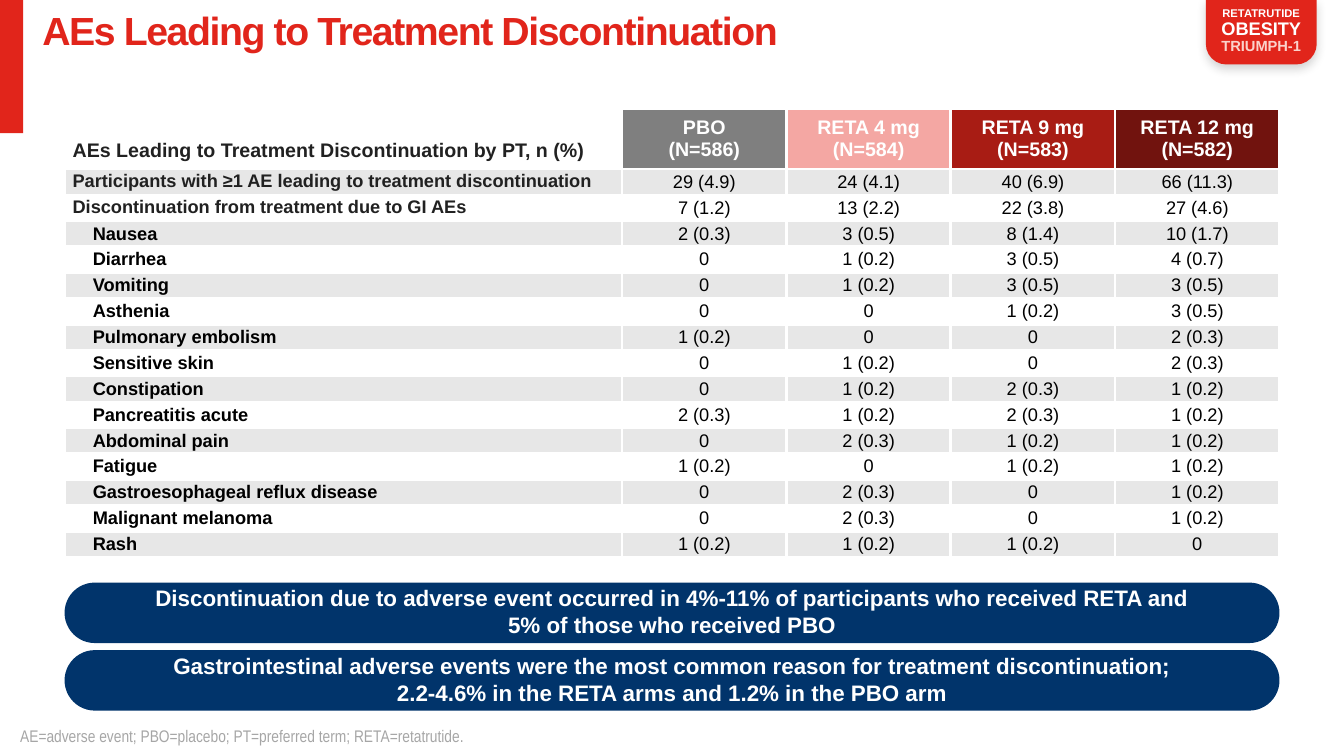
from typing import NamedTuple

from lxml.etree import SubElement
from pptx import Presentation
from pptx.dml.color import RGBColor
from pptx.enum.shapes import MSO_SHAPE as Shape
from pptx.enum.text import MSO_ANCHOR as Anchor, PP_ALIGN as Align
from pptx.oxml.ns import qn
from pptx.util import Inches, Pt

COLORS = {
    "red": "E1251B", "pale_red": "FBD2CB", "navy": "01346B", "white": "FFFFFF",
    "black": "000000", "ink": "212121", "band": "E7E7E7", "note": "A6A6A6",
    "pbo": "7F7F7F", "reta4": "F4A7A3", "reta9": "A81C14", "reta12": "71130E",
}


class Box(NamedTuple):
    left: float
    top: float
    width: float
    height: float

    def emu(self) -> list:
        return [Inches(length) for length in self]


class Style(NamedTuple):
    size: float
    color: str
    bold: bool = True
    align: Align = Align.LEFT
    spacing: float = 1.0
    font: str = "Arial"
    indent: float = 0


class Arm(NamedTuple):
    heading: str
    color: str


class Event(NamedTuple):
    term: str
    counts: tuple
    summary: bool = False


class Message(NamedTuple):
    top: float
    lines: str


ARMS = [
    Arm("PBO\n(N=586)", "pbo"),
    Arm("RETA 4 mg\n(N=584)", "reta4"),
    Arm("RETA 9 mg\n(N=583)", "reta9"),
    Arm("RETA 12 mg\n(N=582)", "reta12"),
]
EVENTS = [
    Event("Participants with ≥1 AE leading to treatment discontinuation",
          ("29 (4.9)", "24 (4.1)", "40 (6.9)", "66 (11.3)"), True),
    Event("Discontinuation from treatment due to GI AEs",
          ("7 (1.2)", "13 (2.2)", "22 (3.8)", "27 (4.6)"), True),
    Event("Nausea", ("2 (0.3)", "3 (0.5)", "8 (1.4)", "10 (1.7)")),
    Event("Diarrhea", ("0", "1 (0.2)", "3 (0.5)", "4 (0.7)")),
    Event("Vomiting", ("0", "1 (0.2)", "3 (0.5)", "3 (0.5)")),
    Event("Asthenia", ("0", "0", "1 (0.2)", "3 (0.5)")),
    Event("Pulmonary embolism", ("1 (0.2)", "0", "0", "2 (0.3)")),
    Event("Sensitive skin", ("0", "1 (0.2)", "0", "2 (0.3)")),
    Event("Constipation", ("0", "1 (0.2)", "2 (0.3)", "1 (0.2)")),
    Event("Pancreatitis acute", ("2 (0.3)", "1 (0.2)", "2 (0.3)", "1 (0.2)")),
    Event("Abdominal pain", ("0", "2 (0.3)", "1 (0.2)", "1 (0.2)")),
    Event("Fatigue", ("1 (0.2)", "0", "1 (0.2)", "1 (0.2)")),
    Event("Gastroesophageal reflux disease", ("0", "2 (0.3)", "0", "1 (0.2)")),
    Event("Malignant melanoma", ("0", "2 (0.3)", "0", "1 (0.2)")),
    Event("Rash", ("1 (0.2)", "1 (0.2)", "1 (0.2)", "0")),
]
MESSAGES = [
    Message(5.78, "Discontinuation due to adverse event occurred in 4%-11% of "
                  "participants who received RETA and\n5% of those who received PBO"),
    Message(6.45, "Gastrointestinal adverse events were the most common reason for "
                  "treatment discontinuation;\n"
                  "2.2-4.6% in the RETA arms and 1.2% in the PBO arm"),
]


def rgb(color: str) -> RGBColor:
    return RGBColor.from_string(COLORS[color])


def write(paragraph, text: str, style: Style) -> None:
    paragraph.text = text
    paragraph.alignment = style.align
    paragraph.line_spacing = style.spacing
    if style.indent:
        paragraph._p.get_or_add_pPr().set("marL", str(Inches(style.indent)))
    font = paragraph.font
    font.name, font.size, font.bold = style.font, Pt(style.size), style.bold
    font.color.rgb = rgb(style.color)


def set_margins(target, left: float, top: float, right: float, bottom: float) -> None:
    target.margin_left, target.margin_top = Inches(left), Inches(top)
    target.margin_right, target.margin_bottom = Inches(right), Inches(bottom)


def add_panel(slide, kind: Shape, box: Box, color: str):
    panel = slide.shapes.add_shape(kind, *box.emu())
    panel.shadow.inherit = False
    panel.fill.solid()
    panel.fill.fore_color.rgb = rgb(color)
    panel.line.fill.background()
    panel.text_frame.word_wrap = True
    panel.text_frame.vertical_anchor = Anchor.MIDDLE
    return panel


def add_label(slide, box: Box, text: str, style: Style, anchor: Anchor):
    frame = slide.shapes.add_textbox(*box.emu()).text_frame
    frame.word_wrap = True
    frame.vertical_anchor = anchor
    set_margins(frame, 0, 0, 0, 0)
    write(frame.paragraphs[0], text, style)
    return frame.paragraphs[0]


def fill_cell(cell, text: str, style: Style, color: str, margins: tuple,
              anchor: Anchor = Anchor.MIDDLE) -> None:
    write(cell.text_frame.paragraphs[0], text, style)
    set_margins(cell, *margins)
    cell.vertical_anchor = anchor
    for side in ("a:lnL", "a:lnR", "a:lnT", "a:lnB"):
        border = SubElement(cell._tc.get_or_add_tcPr(), qn(side), w=str(Pt(2.25)))
        SubElement(SubElement(border, qn("a:solidFill")), qn("a:srgbClr"),
                   val=COLORS["white"])
    cell.fill.solid()
    cell.fill.fore_color.rgb = rgb(color)


def add_badge(slide) -> None:
    badge = add_panel(slide, Shape.ROUND_2_SAME_RECTANGLE, Box(11.96, 0, 1.1, 0.64), "red")
    badge.adjustments[0], badge.adjustments[1] = 0, 0.32
    shadow = SubElement(badge._element.spPr.find(qn("a:effectLst")), qn("a:outerShdw"),
                        blurRad=str(Pt(7)), dist=str(Pt(3)), dir="5400000")
    tint = SubElement(shadow, qn("a:srgbClr"), val=COLORS["ink"])
    SubElement(tint, qn("a:alpha"), val="20000")
    frame = badge.text_frame
    set_margins(frame, 0.08, 0.1, 0.08, 0.06)
    lines = [("RETATRUTIDE", 8, "white"), ("OBESITY", 13, "white"),
             ("TRIUMPH-1", 10.5, "pale_red")]
    for index, (text, size, color) in enumerate(lines):
        paragraph = frame.add_paragraph() if index else frame.paragraphs[0]
        write(paragraph, text, Style(size, color, align=Align.CENTER, spacing=0.9))


def add_event_table(slide) -> None:
    table = slide.shapes.add_table(len(EVENTS) + 1, len(ARMS) + 1,
                                   *Box(0.64, 1.08, 12.05, 4.33).emu()).table
    for index, column in enumerate(table.columns):
        column.width = Inches(1.63 if index else 5.53)
    for index, row in enumerate(table.rows):
        row.height = Inches(0.25 if index else 0.58)

    # Header row
    fill_cell(table.cell(0, 0), "AEs Leading to Treatment Discontinuation by PT, n (%)",
              Style(14, "ink"), "white", (0.08, 0.06, 0.04, 0.07), Anchor.BOTTOM)
    for column, arm in enumerate(ARMS, 1):
        fill_cell(table.cell(0, column), arm.heading, Style(14, "white", align=Align.CENTER),
                  arm.color, (0.01, 0.06, 0.01, 0.07))

    # Event rows
    term_style = Style(13, "black", indent=0.2)
    summary_style = Style(13, "ink", spacing=0.95)
    count_style = Style(13, "black", bold=False, align=Align.CENTER)
    for row, event in enumerate(EVENTS, 1):
        band = "band" if row % 2 else "white"
        fill_cell(table.cell(row, 0), event.term,
                  summary_style if event.summary else term_style, band,
                  (0.08, 0.02, 0.04, 0.02))
        for column, count in enumerate(event.counts, 1):
            fill_cell(table.cell(row, column), count, count_style, band,
                      (0.01, 0.02, 0.01, 0.02))


def main() -> None:
    deck = Presentation()
    deck.slide_width, deck.slide_height = Inches(13.33), Inches(7.5)
    slide = deck.slides.add_slide(deck.slide_layouts[6])

    # Accent bar, study badge and title
    add_panel(slide, Shape.RECTANGLE, Box(0, 0, 0.23, 1.32), "red")
    add_badge(slide)
    title = add_label(slide, Box(0.42, 0.12, 10.83, 0.85),
                      "AEs Leading to Treatment Discontinuation",
                      Style(28, "red", spacing=0.9), Anchor.TOP)
    title.runs[0]._r.get_or_add_rPr().set("spc", "-100")

    add_event_table(slide)

    # Key messages
    for message in MESSAGES:
        banner = add_panel(slide, Shape.ROUNDED_RECTANGLE,
                           Box(0.64, message.top, 12.05, 0.6), "navy")
        banner.adjustments[0] = 0.5
        set_margins(banner.text_frame, 0.1, 0, 0.1, 0.03)
        write(banner.text_frame.paragraphs[0], message.lines,
              Style(16, "white", align=Align.CENTER))

    # Abbreviations
    add_label(slide, Box(0.2, 7, 9.81, 0.4),
              "AE=adverse event; PBO=placebo; PT=preferred term; RETA=retatrutide.",
              Style(12, "note", bold=False, font="Arial Narrow"), Anchor.BOTTOM)

    deck.save("out.pptx")


if __name__ == "__main__":
    main()
